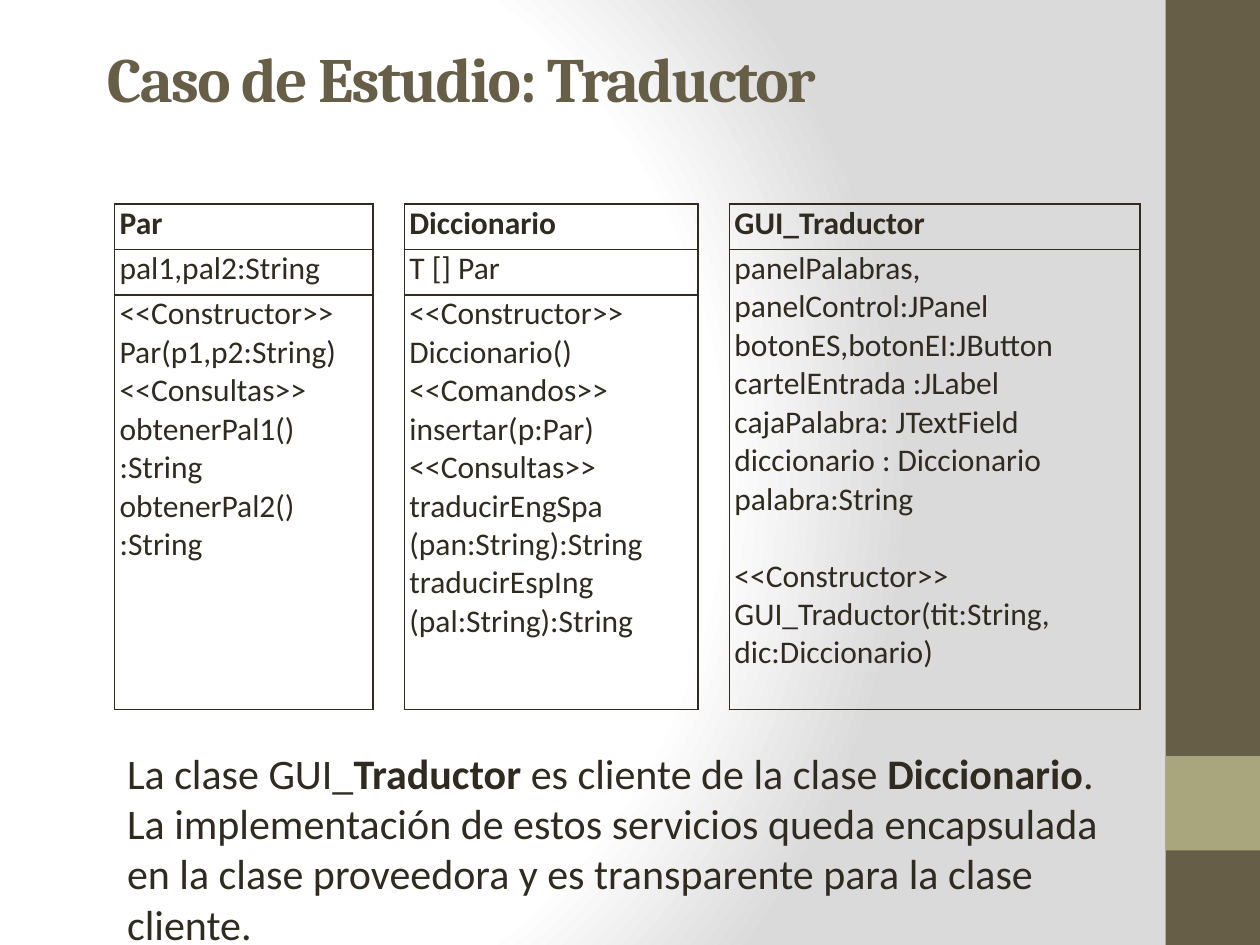
from lxml import etree
from pptx import Presentation
from pptx.dml.color import RGBColor
from pptx.enum.shapes import MSO_SHAPE
from pptx.enum.text import MSO_ANCHOR
from pptx.oxml import parse_xml
from pptx.oxml.ns import qn
from pptx.util import Inches, Pt

INK, BROWN, OLIVE = "2F2B20", "675E47", "A9A57C"
NAMESPACE = "http://schemas.openxmlformats.org/drawingml/2006/main"


def color(value):
    return RGBColor.from_string(value)


def add_span(para, text, size, bold=False, font="Calibri", ink=INK):
    span = para.add_run()
    span.text = text
    span.font.color.rgb = color(ink)
    for name, value in {"name": font, "size": Pt(size), "bold": bold}.items():
        setattr(span.font, name, value)
    return span


deck = Presentation()
deck.slide_width, deck.slide_height = Inches(10), Inches(7.5)
page = deck.slides.add_slide(deck.slide_layouts[6])

# Radial background
page.background.fill.solid()
plain_fill = page.element.find(".//" + qn("p:bgPr")).find(qn("a:solidFill"))
stops = "".join(
    f'<a:gs pos="{position * 1000}"><a:srgbClr val="{value}"/></a:gs>'
    for position, value in [(0, "FFFFFF"), (75, "FFFFFF"), (100, "DADADA")]
)
plain_fill.getparent().replace(plain_fill, parse_xml(
    f'<a:gradFill xmlns:a="{NAMESPACE}" rotWithShape="1"><a:gsLst>{stops}</a:gsLst>'
    '<a:path path="circle"><a:fillToRect l="20000" t="50000" r="100000" b="50000"/>'
    "</a:path></a:gradFill>"
))

# Side band
for top, height, fill in [(0, 7.5, BROWN), (6, 0.75, OLIVE)]:
    band = page.shapes.add_shape(
        MSO_SHAPE.RECTANGLE, Inches(9.25), Inches(top), Inches(0.75), Inches(height))
    band.shadow.inherit = False
    band.fill.solid()
    band.fill.fore_color.rgb = color(fill)
    band.line.fill.background()

# Title
title = page.shapes.add_textbox(Inches(0.75), Inches(0), Inches(8.5), Inches(1.23)).text_frame
title.word_wrap = True
title.vertical_anchor = MSO_ANCHOR.MIDDLE
heading = add_span(title.paragraphs[0], "Caso de Estudio: Traductor", 36, True, "Cambria", BROWN)
heading.font._element.set("spc", "-100")

# Class diagrams: one table column per class, with empty columns between
column_widths = [2.05, 0.25, 2.33, 0.25, 3.26]
row_heights = [0.36, 0.36, 3.29]
classes = {
    0: [
        ["Par"],
        ["pal1,pal2:String"],
        ["<<Constructor>>", "Par(p1,p2:String)", "<<Consultas>>",
         "obtenerPal1()", ":String", "obtenerPal2()", ":String"],
    ],
    2: [
        ["Diccionario"],
        ["T [] Par"],
        ["<<Constructor>>", "Diccionario()", "<<Comandos>>", "insertar(p:Par)",
         "<<Consultas>>", "traducirEngSpa", "(pan:String):String",
         "traducirEspIng", "(pal:String):String"],
    ],
    4: [
        ["GUI_Traductor"],
        ["panelPalabras, panelControl:JPanel", "botonES,botonEI:JButton",
         "cartelEntrada :JLabel cajaPalabra: JTextField",
         "diccionario : Diccionario", "palabra:String",
         "<<Constructor>>", "GUI_Traductor(tit:String, dic:Diccionario)"],
    ],
}
table = page.shapes.add_table(
    len(row_heights), len(column_widths), Inches(0.91), Inches(1.62),
    Inches(sum(column_widths)), Inches(sum(row_heights))).table
table.first_row = table.horz_banding = False
for column, width in zip(table.columns, column_widths):
    column.width = Inches(width)
for row, height in zip(table.rows, row_heights):
    row.height = Inches(height)
table.cell(1, 4).merge(table.cell(2, 4))

cell_format = {
    "margin_left": Inches(0.04), "margin_right": Inches(0.04),
    "margin_top": 0, "margin_bottom": 0,
}
for row in range(len(row_heights)):
    for column in range(len(column_widths)):
        cell = table.cell(row, column)
        for name, value in cell_format.items():
            setattr(cell, name, value)
        properties = cell._tc.get_or_add_tcPr()
        for side in "LRTB":
            border = etree.SubElement(properties, qn(f"a:ln{side}"), w=str(Pt(1)))
            if column in classes or side in "LR":
                paint = etree.SubElement(border, qn("a:solidFill"))
                etree.SubElement(paint, qn("a:srgbClr"), val=INK)
            else:
                etree.SubElement(border, qn("a:noFill"))
        cell.fill.background()

for column, sections in classes.items():
    for row, lines in enumerate(sections):
        frame = table.cell(row, column).text_frame
        for index, line in enumerate(lines):
            para = frame.add_paragraph() if index else frame.paragraphs[0]
            add_span(para, line, 18, bold=row == 0)
            if index and line == "<<Constructor>>":
                para.space_before = Pt(22)

# Explanation
note = page.shapes.add_textbox(Inches(0.91), Inches(5.88), Inches(8.11), Inches(1.72)).text_frame
note.word_wrap = True
for text, bold in [
    ("La clase GUI_", False),
    ("Traductor ", True),
    ("es cliente de la clase ", False),
    ("Diccionario", True),
    (". La implementación de estos servicios queda encapsulada en la clase "
     "proveedora y es transparente para la clase cliente.", False),
]:
    add_span(note.paragraphs[0], text, 24, bold)

deck.save("out.pptx")
